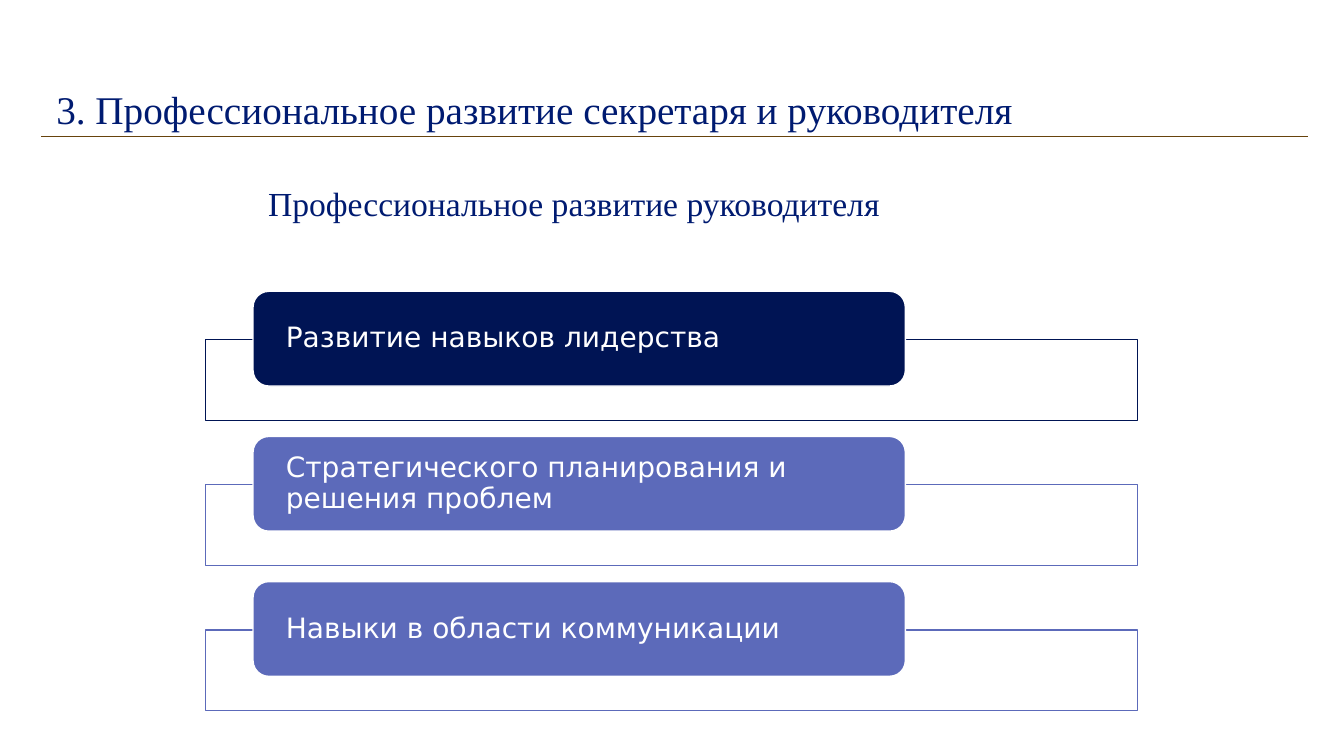
from pptx import Presentation
from pptx.dml.color import RGBColor
from pptx.enum.shapes import MSO_CONNECTOR as Connector, MSO_SHAPE as Shape
from pptx.enum.text import MSO_ANCHOR as Anchor, MSO_AUTO_SIZE as AutoSize, PP_ALIGN as Align
from pptx.oxml.ns import qn
from pptx.util import Inches, Pt
from lxml.etree import SubElement

COLORS = {"heading": "001B71", "navy": "001454", "violet": "5C6ABA",
          "white": "FFFFFF", "rule": "67430C"}
SKILLS = [("Развитие навыков лидерства", "navy"),
          ("Стратегического планирования и решения проблем", "violet"),
          ("Навыки в области коммуникации", "violet")]


class SkillSlide:
    """Holds the slide, its fonts and colours, and draws its elements."""

    heading_font = "Times New Roman"
    card_font = "DejaVu Sans"

    def __init__(self, deck):
        self.slide = deck.slides.add_slide(deck.slide_layouts[5])

    def color(self, name):
        return RGBColor.from_string(COLORS[name])

    def add_text(self, frame, text, font, size, color, align=Align.LEFT, spacing=1.0):
        frame.word_wrap = True
        paragraph = frame.paragraphs[0]
        paragraph.alignment = align
        paragraph.line_spacing = spacing
        run = paragraph.add_run()
        run.text = text
        run.font.name = font
        run.font.size = Pt(size)
        run.font.color.rgb = self.color(color)

    def title(self, text, left, top, width, height):
        heading = self.slide.shapes.title
        heading.left, heading.top = Inches(left), Inches(top)
        heading.width, heading.height = Inches(width), Inches(height)
        frame = heading.text_frame
        frame.auto_size = AutoSize.NONE
        frame.vertical_anchor = Anchor.MIDDLE
        self.add_text(frame, text, self.heading_font, 28, "heading", Align.CENTER, 0.9)

    def subtitle(self, text, left, top, width, height):
        box = self.slide.shapes.add_textbox(
            Inches(left), Inches(top), Inches(width), Inches(height))
        self.add_text(box.text_frame, text, self.heading_font, 24, "heading")

    def rule(self, left, right, y):
        line = self.slide.shapes.add_connector(
            Connector.STRAIGHT, Inches(left), Inches(y), Inches(right), Inches(y))
        line.line.color.rgb = self.color("rule")
        line.line.width = Pt(0.5)
        SubElement(line._element.spPr, qn("a:effectLst"))

    def block(self, kind, left, top, width, height, fill, outline):
        block = self.slide.shapes.add_shape(
            kind, Inches(left), Inches(top), Inches(width), Inches(height))
        block.shadow.inherit = False
        block.fill.solid()
        block.fill.fore_color.rgb = self.color(fill)
        block.line.color.rgb = self.color(outline)
        block.line.width = Pt(1)
        return block

    def skill(self, text, color, top):
        self.block(Shape.RECTANGLE, 2.04, top + 0.48, 9.24, 0.8, "white", color)
        card = self.block(Shape.ROUNDED_RECTANGLE, 2.51, top, 6.47, 0.94, color, "white")
        frame = card.text_frame
        frame.margin_left = frame.margin_right = Inches(0.28)
        frame.margin_top = frame.margin_bottom = 0
        frame.vertical_anchor = Anchor.MIDDLE
        self.add_text(frame, text, self.card_font, 20, "white", spacing=0.9)


def main():
    deck = Presentation()
    deck.slide_width, deck.slide_height = Inches(13.33), Inches(7.5)
    page = SkillSlide(deck)
    page.rule(0.41, 12.97, 1.35)
    page.title("3. Профессиональное развитие секретаря и руководителя",
               -0.54, -0.47, 11.68, 3.15)
    for index, (text, color) in enumerate(SKILLS):
        page.skill(text, color, 2.89 + 1.44 * index)
    page.subtitle("Профессиональное развитие руководителя", 2.56, 1.77, 8.21, 0.5)
    deck.save("out.pptx")


if __name__ == "__main__":
    main()
